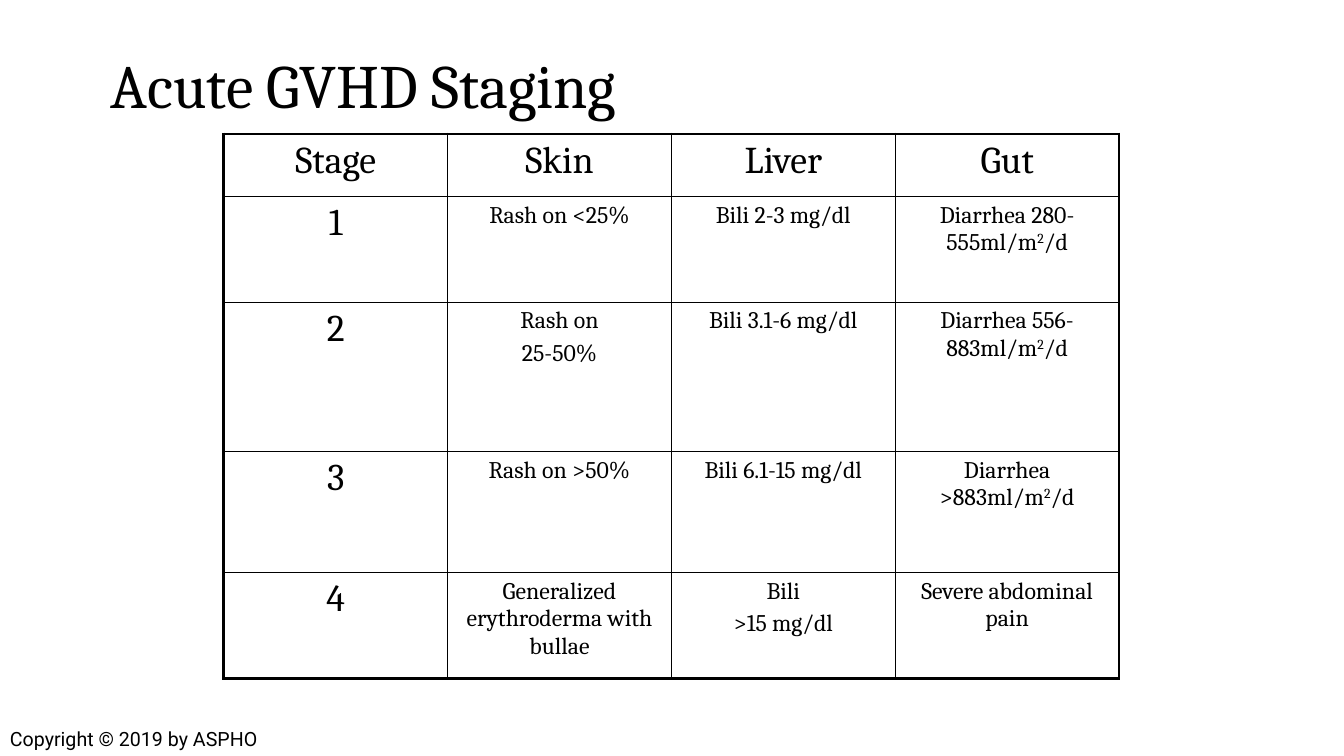
from dataclasses import dataclass

from lxml.etree import SubElement
from pptx import Presentation
from pptx.dml.color import RGBColor
from pptx.enum.text import MSO_ANCHOR, PP_ALIGN
from pptx.oxml.ns import qn
from pptx.util import Pt


@dataclass(frozen=True)
class Theme:
    ink: str = "000000"
    serif: str = "Cambria"
    sans: str = "Roboto"
    title: int = 44
    head: int = 27
    body: int = 17
    note: int = 14
    gap: float = 3.4
    thin: float = 1
    thick: float = 2.25


PX = 9144  # EMU, 100 px to the inch
COLS = [222] * 4
ROWS = [62, 105, 148, 120, 105]
# A line break starts a paragraph; ^ raises the next character.
STAGES = [
    ["Stage", "Skin", "Liver", "Gut"],
    ["1", "Rash on <25%", "Bili 2-3 mg/dl", "Diarrhea 280-555ml/m^2/d"],
    ["2", "Rash on\n25-50%", "Bili 3.1-6 mg/dl", "Diarrhea 556-883ml/m^2/d"],
    ["3", "Rash on >50%", "Bili 6.1-15 mg/dl", "Diarrhea >883ml/m^2/d"],
    ["4", "Generalized erythroderma with bullae", "Bili\n>15 mg/dl",
     "Severe abdominal pain"],
]


class Deck:
    def __init__(self, theme, width, height):
        self.theme = theme
        self.show = Presentation()
        self.show.slide_width = width * PX
        self.show.slide_height = height * PX
        self.slide = self.show.slides.add_slide(self.show.slide_layouts[6])

    def text(self, frame, words, face, size, align=PP_ALIGN.LEFT):
        for n, line in enumerate(words.split("\n")):
            para = frame.add_paragraph() if n else frame.paragraphs[0]
            para.alignment = align
            if n:
                para.space_before = Pt(self.theme.gap)
            base, *raised = line.split("^")
            para.add_run().text = base
            for part in raised:
                power = para.add_run()
                power.text = part[0]
                power._r.get_or_add_rPr().set("baseline", "30000")
                para.add_run().text = part[1:]
            para.font.name = face
            para.font.size = Pt(size)
            para.font.color.rgb = RGBColor.from_string(self.theme.ink)

    def label(self, box, words, face, size, anchor=MSO_ANCHOR.TOP, pitch=1.0):
        frame = self.slide.shapes.add_textbox(*(v * PX for v in box)).text_frame
        frame.word_wrap = True
        frame.vertical_anchor = anchor
        self.text(frame, words, face, size)
        frame.paragraphs[0].line_spacing = pitch

    def edge(self, cell, side, width):
        line = SubElement(cell._tc.get_or_add_tcPr(), qn(f"a:ln{side}"),
                          w=str(Pt(width)))
        fill = SubElement(line, qn("a:solidFill"))
        SubElement(fill, qn("a:srgbClr"), val=self.theme.ink)

    def cell(self, cell, words, size, outer):
        """Fill one cell; the sides named in outer get the thick line."""
        cell.margin_left = cell.margin_right = 13 * PX
        cell.margin_top = cell.margin_bottom = 5 * PX
        for side in "LRTB":
            thick = side in outer
            self.edge(cell, side, self.theme.thick if thick else self.theme.thin)
        cell.fill.background()
        self.text(cell.text_frame, words, self.theme.serif, size, PP_ALIGN.CENTER)

    def table(self, left, top, cols, rows, data):
        box = (left, top, sum(cols), sum(rows))
        grid = self.slide.shapes.add_table(
            len(rows), len(cols), *(v * PX for v in box)).table
        grid.first_row = grid.horz_banding = False
        for col, width in zip(grid.columns, cols):
            col.width = width * PX
        for row, height in zip(grid.rows, rows):
            row.height = height * PX
        for r, line in enumerate(data):
            for c, words in enumerate(line):
                ends = {"L": c == 0, "R": c == len(cols) - 1,
                        "T": r == 0, "B": r == len(rows) - 1}
                outer = [side for side, last in ends.items() if last]
                size = self.theme.body if r and c else self.theme.head
                self.cell(grid.cell(r, c), words, size, outer)


def main():
    theme = Theme()
    deck = Deck(theme, 1333, 750)
    deck.label((100, 25, 1133, 125), "Acute GVHD Staging", theme.serif,
               theme.title, MSO_ANCHOR.MIDDLE, 0.9)
    deck.table(222, 133, COLS, ROWS, STAGES)
    deck.label((0, 716, 340, 34), "Copyright © 2019 by ASPHO", theme.sans,
               theme.note)
    deck.show.save("out.pptx")


if __name__ == "__main__":
    main()
